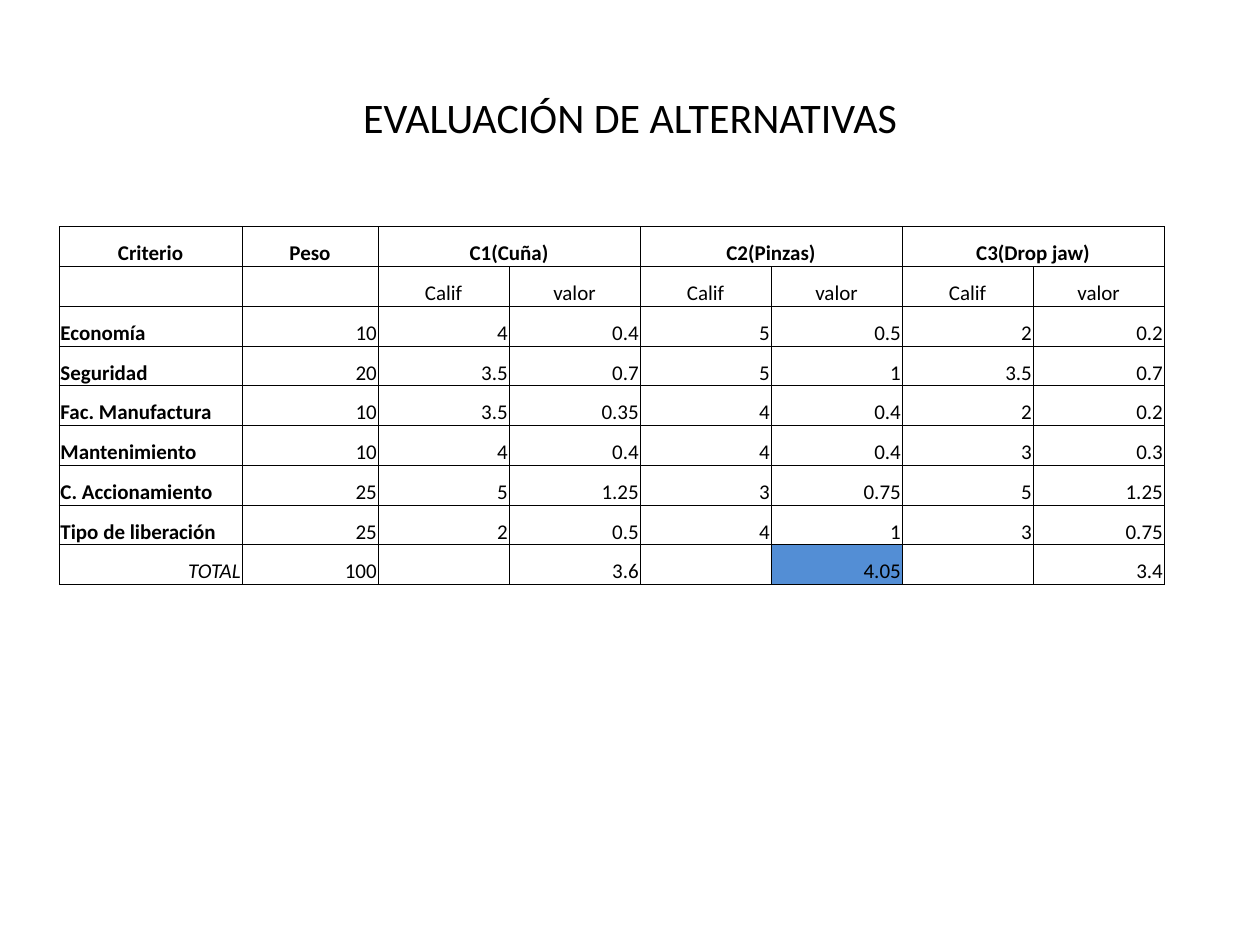
from lxml.etree import SubElement
from pptx import Presentation
from pptx.dml.color import RGBColor
from pptx.enum.text import MSO_ANCHOR, PP_ALIGN
from pptx.oxml.ns import qn
from pptx.util import Inches, Pt

BLACK = RGBColor(0x00, 0x00, 0x00)
BLUE = RGBColor(0x53, 0x8E, 0xD5)
FONT = "Calibri"

# Content
TITLE = "EVALUACIÓN DE ALTERNATIVAS"
ROWS = [
    ["Criterio", "Peso", "C1(Cuña)", "", "C2(Pinzas)", "", "C3(Drop jaw)", ""],
    ["", ""] + ["Calif", "valor"] * 3,
    ["Economía", "10", "4", "0.4", "5", "0.5", "2", "0.2"],
    ["Seguridad", "20", "3.5", "0.7", "5", "1", "3.5", "0.7"],
    ["Fac. Manufactura", "10", "3.5", "0.35", "4", "0.4", "2", "0.2"],
    ["Mantenimiento", "10", "4", "0.4", "4", "0.4", "3", "0.3"],
    ["C. Accionamiento", "25", "5", "1.25", "3", "0.75", "5", "1.25"],
    ["Tipo de liberación", "25", "2", "0.5", "4", "1", "3", "0.75"],
    ["TOTAL", "100", "", "3.6", "", "4.05", "", "3.4"],
]
HEADER_ROWS = 2
TOTAL_ROW = len(ROWS) - 1
ALTERNATIVE_COLUMNS = (2, 4, 6)
BEST_CELL = (TOTAL_ROW, 5)
COLUMN_WIDTHS = [1.45, 1.08] + [1.04] * 6
TABLE_HEIGHT = Inches(2.84)


def set_font(paragraph, size):
    paragraph.font.name = FONT
    paragraph.font.size = Pt(size)
    paragraph.font.color.rgb = BLACK


def add_borders(cell):
    properties = cell._tc.get_or_add_tcPr()
    for position, side in enumerate(("lnL", "lnR", "lnT", "lnB")):
        line = SubElement(properties, qn(f"a:{side}"), w=str(Pt(0.5)))
        fill = SubElement(line, qn("a:solidFill"))
        SubElement(fill, qn("a:srgbClr"), val=str(BLACK))
        properties.insert(position, line)


def alignment_for(row, column):
    if row < HEADER_ROWS:
        return PP_ALIGN.CENTER
    if column == 0 and row != TOTAL_ROW:
        return PP_ALIGN.LEFT
    return PP_ALIGN.RIGHT


def format_cell(cell, row, column, text):
    cell.vertical_anchor = MSO_ANCHOR.BOTTOM
    cell.margin_left = cell.margin_right = cell.margin_top = Inches(0.01)
    cell.margin_bottom = 0
    cell.text = text
    paragraph = cell.text_frame.paragraphs[0]
    paragraph.alignment = alignment_for(row, column)
    set_font(paragraph, 12)
    paragraph.font.bold = row == 0 or (column == 0 and row != TOTAL_ROW)
    paragraph.font.italic = (row, column) == (TOTAL_ROW, 0)
    if (row, column) == BEST_CELL:
        cell.fill.solid()
        cell.fill.fore_color.rgb = BLUE
    else:
        cell.fill.background()
    add_borders(cell)


def main():
    deck = Presentation()
    deck.slide_width, deck.slide_height = Inches(10), Inches(7.5)
    page = deck.slides.add_slide(deck.slide_layouts[5])

    # Title
    title = page.shapes.title
    title.left, title.top = Inches(0.5), Inches(0.3)
    title.width, title.height = Inches(9), Inches(1.25)
    title.text_frame.text = TITLE
    title.text_frame.vertical_anchor = MSO_ANCHOR.MIDDLE
    heading = title.text_frame.paragraphs[0]
    heading.alignment = PP_ALIGN.CENTER
    set_font(heading, 24)

    # Evaluation table
    table = page.shapes.add_table(
        len(ROWS), len(COLUMN_WIDTHS), Inches(0.47), Inches(1.8),
        Inches(sum(COLUMN_WIDTHS)), TABLE_HEIGHT).table
    table.first_row = table.horz_banding = False
    for column, width in zip(table.columns, COLUMN_WIDTHS):
        column.width = Inches(width)
    for row in table.rows:
        row.height = TABLE_HEIGHT // len(ROWS)
    for row, texts in enumerate(ROWS):
        for column, text in enumerate(texts):
            format_cell(table.cell(row, column), row, column, text)

    # Each alternative heads a pair of columns
    for column in ALTERNATIVE_COLUMNS:
        table.cell(0, column).merge(table.cell(0, column + 1))

    deck.save("out.pptx")


if __name__ == "__main__":
    main()
